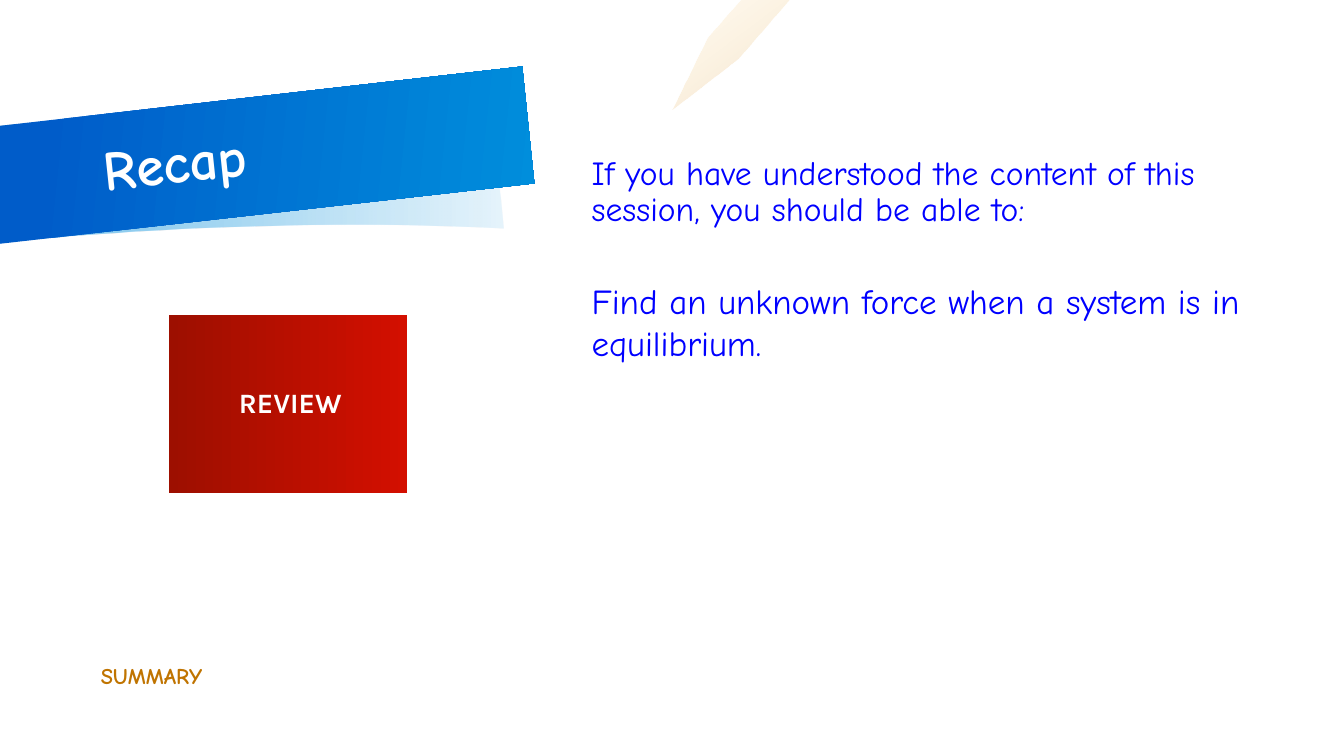
from lxml import etree
from pptx import Presentation
from pptx.dml.color import RGBColor
from pptx.enum.shapes import MSO_SHAPE
from pptx.enum.text import MSO_ANCHOR, PP_ALIGN
from pptx.oxml import parse_xml
from pptx.oxml.ns import nsdecls, qn
from pptx.util import Inches, Pt

WHITE = RGBColor(0xFF, 0xFF, 0xFF)
BLUE = RGBColor(0x00, 0x00, 0xFF)
OCHRE = RGBColor(0xC0, 0x74, 0x00)
SKY = RGBColor(0x00, 0x8E, 0xDC)
ROYAL = RGBColor(0x00, 0x5C, 0xC9)
AMBER = RGBColor(0xFF, 0xAA, 0x00)
RED = RGBColor(0xD3, 0x0F, 0x00)
DARK_RED = RGBColor(0x9D, 0x0F, 0x00)
HAND = "Comic Neue"

TITLE = "Recap"
LABEL = "REVIEW"
FOOTER = "SUMMARY"
INTRO = "If you have understood the content of this session, you should be able to:"
GOAL = "Find an unknown force when a system is in equilibrium."


def curve(a, b, c, d, steps=24):
    points = []
    for i in range(steps + 1):
        t = i / steps
        u = 1 - t
        weights = (u**3, 3 * u * u * t, 3 * u * t * t, t**3)
        points.append(tuple(sum(w * p[axis] for w, p in zip(weights, (a, b, c, d)))
                            for axis in (0, 1)))
    return points


SHADOW = (curve((4.87, 1.13), (4.87, 1.13), (3.13, 0.94), (-0.02, 1.25))
          + curve((-0.02, 2.41), (2.86, 2.12), (4.99, 2.27), (4.99, 2.27)))
BANNER = [(-0.01, 2.42), (5.3, 1.82), (5.18, 0.66), (-0.01, 1.25)]
PENCIL = [(7.35, 0), (7.02, 0.38), (6.67, 1.09), (7.32, 0.59), (7.83, 0)]

# outline, gradient stops (position %, colour, opacity %), angle
OUTLINES = [
    (SHADOW, [(0, SKY, 10), (88, SKY, 50)], 180),
    (BANNER, [(9, ROYAL, 100), (100, SKY, 100)], 6),
    (PENCIL, [(0, AMBER, 5), (100, OCHRE, 20)], 53),
]
CARD_STOPS = [(0, RED, 100), (100, DARK_RED, 100)]


def paint(sp, stops, angle):
    sp.shadow.inherit = False
    sp.line.fill.background()
    sp.fill.background()
    grad = parse_xml(f'<a:gradFill {nsdecls("a")} rotWithShape="1"><a:gsLst/>'
                     f'<a:lin ang="{angle * 60000}" scaled="0"/></a:gradFill>')
    for pos, color, opacity in stops:
        gs = etree.SubElement(grad[0], qn("a:gs"), pos=str(pos * 1000))
        clr = etree.SubElement(gs, qn("a:srgbClr"), val=str(color))
        if opacity < 100:
            etree.SubElement(clr, qn("a:alpha"), val=str(opacity * 1000))
    props = sp.element.spPr
    props.replace(props.find(qn("a:noFill")), grad)


def style(p, text, size, color, font=HAND, bold=False, spacing=None):
    p.text = text
    p.font.name, p.font.size, p.font.bold = font, Pt(size), bold
    p.font.color.rgb = color
    if spacing:
        p.line_spacing = spacing


def text_box(shapes, box, anchor=MSO_ANCHOR.TOP):
    sp = shapes.add_textbox(*map(Inches, box))
    tf = sp.text_frame
    tf.word_wrap = True
    tf.vertical_anchor = anchor
    return sp, tf


def main():
    prs = Presentation()
    prs.slide_width, prs.slide_height = Inches(13.33), Inches(7.5)
    shapes = prs.slides.add_slide(prs.slide_layouts[6]).shapes

    for points, stops, angle in OUTLINES:
        start, *rest = [(Inches(x), Inches(y)) for x, y in points]
        builder = shapes.build_freeform(*start)
        builder.add_line_segments(rest, close=True)
        paint(builder.convert_to_shape(), stops, angle)

    sp, tf = text_box(shapes, (1, 6.5, 3.8, 0.4), MSO_ANCHOR.MIDDLE)
    tf.margin_left = 0
    style(tf.paragraphs[0], FOOTER, 16, OCHRE, bold=True)

    sp, tf = text_box(shapes, (0.92, 0.92, 4.33, 1.16), MSO_ANCHOR.MIDDLE)
    sp.rotation = -6
    style(tf.paragraphs[0], TITLE, 40, WHITE, bold=True, spacing=0.9)

    card = shapes.add_shape(MSO_SHAPE.RECTANGLE, *map(Inches, (1.68, 3.13, 2.36, 1.76)))
    paint(card, CARD_STOPS, 180)
    tf = card.text_frame
    tf.word_wrap = True
    tf.vertical_anchor = MSO_ANCHOR.MIDDLE
    tf.margin_left = Inches(0.16)
    tf.margin_right = tf.margin_top = tf.margin_bottom = Inches(0.12)
    style(tf.paragraphs[0], LABEL, 20, WHITE, "Karla", True, 0.9)
    tf.paragraphs[0].alignment = PP_ALIGN.CENTER

    sp, tf = text_box(shapes, (5.77, 1.5, 6.83, 5.4))
    style(tf.paragraphs[0], INTRO, 24, BLUE, spacing=0.9)
    goal = tf.add_paragraph()
    style(goal, GOAL, 25, BLUE)
    goal.space_before = Pt(36)

    prs.save("out.pptx")


if __name__ == "__main__":
    main()
